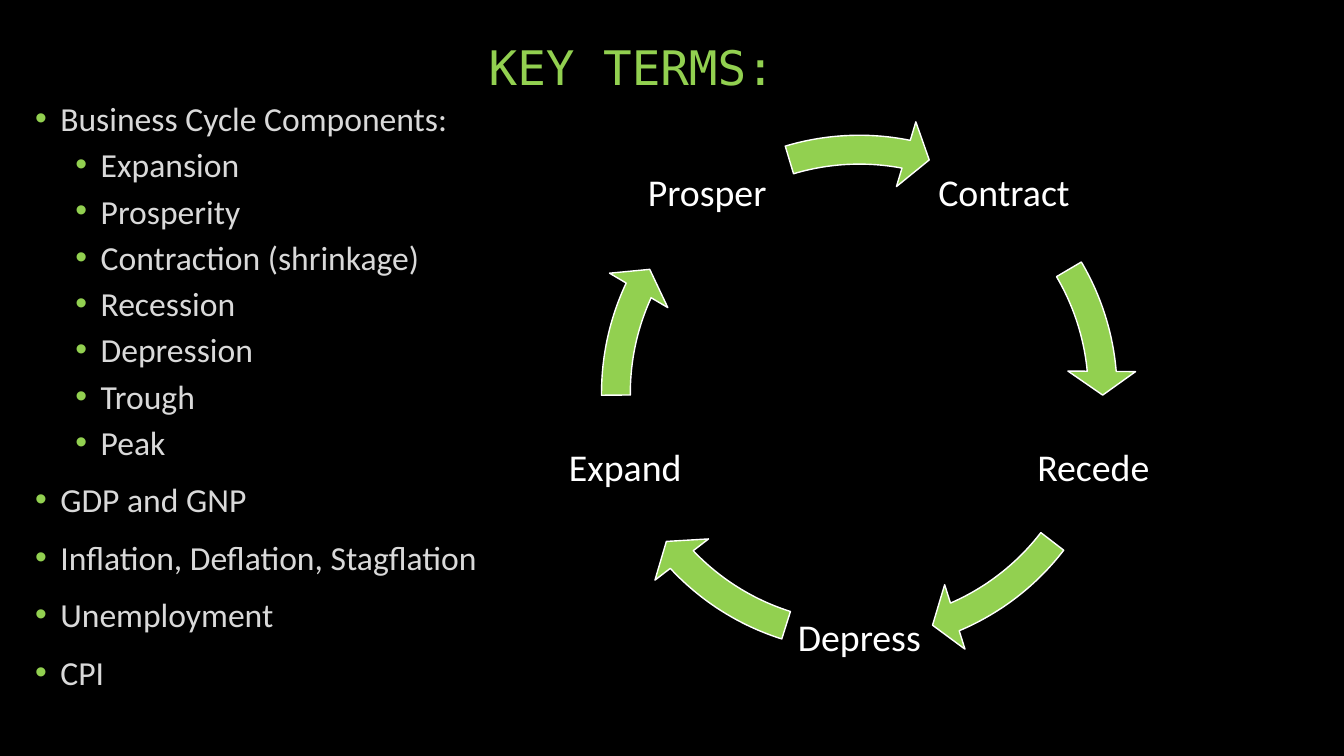
import math

from lxml import etree
from pptx import Presentation
from pptx import util as u
from pptx.dml.color import RGBColor
from pptx.enum import shapes, text
from pptx.oxml.ns import qn

COLORS = {"black": "000000", "green": "92D050", "gray": "D9D9D9", "white": "FFFFFF"}
COLUMNS, ROWS = 160, 90
WHEEL_X, WHEEL_Y, WHEEL_SIZE = 102.3, 46.8, 66
LABEL_RADIUS, LABEL_SIZE = 29.3, 17.64
ADJUSTMENT_PER_DEGREE = 0.6

TERMS = [
    ("Business Cycle Components:", 0),
    ("Expansion", 1),
    ("Prosperity", 1),
    ("Contraction (shrinkage)", 1),
    ("Recession", 1),
    ("Depression", 1),
    ("Trough", 1),
    ("Peak", 1),
    ("GDP and GNP", 0),
    ("Inflation, Deflation, Stagflation", 0),
    ("Unemployment", 0),
    ("CPI", 0),
]
LEVELS = [{"indent": 0.25, "before": 18}, {"indent": 0.65, "before": 10}]
PHASES = [
    ("Contract", 329.44, 354.88, 0),
    ("Recede", 37.56, 66.9, 0),
    ("Depress", 107.5, 136.84, 0),
    ("Expand", 179.52, 204.96, 0),
    ("Prosper", 253.31, 281.09, -0.9),
]


def color(name):
    return RGBColor.from_string(COLORS[name])


def write(paragraph, words, *, size, fill, font="Calibri", spacing=0.9, before=0,
          align=text.PP_ALIGN.LEFT):
    paragraph.alignment = align
    paragraph.line_spacing = spacing
    paragraph.space_before = u.Pt(before)
    run = paragraph.add_run()
    run.text = words
    run.font.name = font
    run.font.size = u.Pt(size)
    run.font.color.rgb = color(fill)


def add_bullet(paragraph, indent, fill):
    properties = paragraph._p.get_or_add_pPr()
    properties.set("marL", str(u.Inches(indent)))
    properties.set("indent", str(u.Inches(-0.25)))
    bullet_color = etree.SubElement(properties, qn("a:buClr"))
    etree.SubElement(bullet_color, qn("a:srgbClr"), val=COLORS[fill])
    etree.SubElement(properties, qn("a:buFont"), typeface="Arial")
    etree.SubElement(properties, qn("a:buChar"), char="•")


class Deck:
    def __init__(self):
        self.presentation = Presentation()
        self.presentation.slide_width = u.Inches(13.33)
        self.presentation.slide_height = u.Inches(7.5)
        self.slide = self.presentation.slides.add_slide(self.presentation.slide_layouts[6])
        self.slide.background.fill.solid()
        self.slide.background.fill.fore_color.rgb = color("black")

    def box(self, left, top, width, height):
        column = self.presentation.slide_width / COLUMNS
        row = self.presentation.slide_height / ROWS
        return [round(length) for length in
                (left * column, top * row, width * column, height * row)]

    def frame(self, *area, anchor=text.MSO_ANCHOR.TOP):
        frame = self.slide.shapes.add_textbox(*self.box(*area)).text_frame
        frame.word_wrap = True
        frame.vertical_anchor = anchor
        return frame

    def title(self, words, *area):
        frame = self.frame(*area, anchor=text.MSO_ANCHOR.BOTTOM)
        write(frame.paragraphs[0], words, size=34, fill="green", font="DejaVu Sans Mono")

    def bullets(self, items, *area):
        frame = self.frame(*area)
        for index, (words, level) in enumerate(items):
            paragraph = frame.add_paragraph() if index else frame.paragraphs[0]
            paragraph.level = level
            write(paragraph, words, size=24, fill="gray", spacing=0.8,
                  before=LEVELS[level]["before"])
            add_bullet(paragraph, LEVELS[level]["indent"], "green")

    def label(self, words, center_x, center_y):
        half = LABEL_SIZE / 2
        frame = self.frame(center_x - half, center_y - half, LABEL_SIZE, LABEL_SIZE,
                           anchor=text.MSO_ANCHOR.MIDDLE)
        frame.margin_left = frame.margin_right = u.Inches(0.04)
        frame.margin_top = frame.margin_bottom = u.Inches(0.04)
        write(frame.paragraphs[0], words, size=27, fill="white", align=text.PP_ALIGN.CENTER)

    def arrow(self, start, end):
        half = WHEEL_SIZE / 2
        shape = self.slide.shapes.add_shape(
            shapes.MSO_SHAPE.CIRCULAR_ARROW,
            *self.box(WHEEL_X - half, WHEEL_Y - half, WHEEL_SIZE, WHEEL_SIZE))
        shape.shadow.inherit = False
        shape.fill.solid()
        shape.fill.fore_color.rgb = color("green")
        shape.line.color.rgb = color("white")
        shape.line.width = u.Pt(1)
        head, finish, begin = (angle * ADJUSTMENT_PER_DEGREE for angle in (5.6, end, start))
        for index, value in enumerate((0.052, head, finish, begin, 0.061)):
            shape.adjustments[index] = value

    def cycle(self, phases):
        for index, (words, start, end, nudge) in enumerate(phases):
            angle = math.radians(-54 + index * 360 / len(phases))
            self.label(words, WHEEL_X + LABEL_RADIUS * math.cos(angle) + nudge,
                       WHEEL_Y + LABEL_RADIUS * math.sin(angle))
            self.arrow(start, end)


def main():
    deck = Deck()
    deck.title("KEY TERMS:", 57, 2, 37, 10)
    deck.bullets(TERMS, 3, 12, 138, 74)
    deck.cycle(PHASES)
    deck.presentation.save("out.pptx")


if __name__ == "__main__":
    main()
